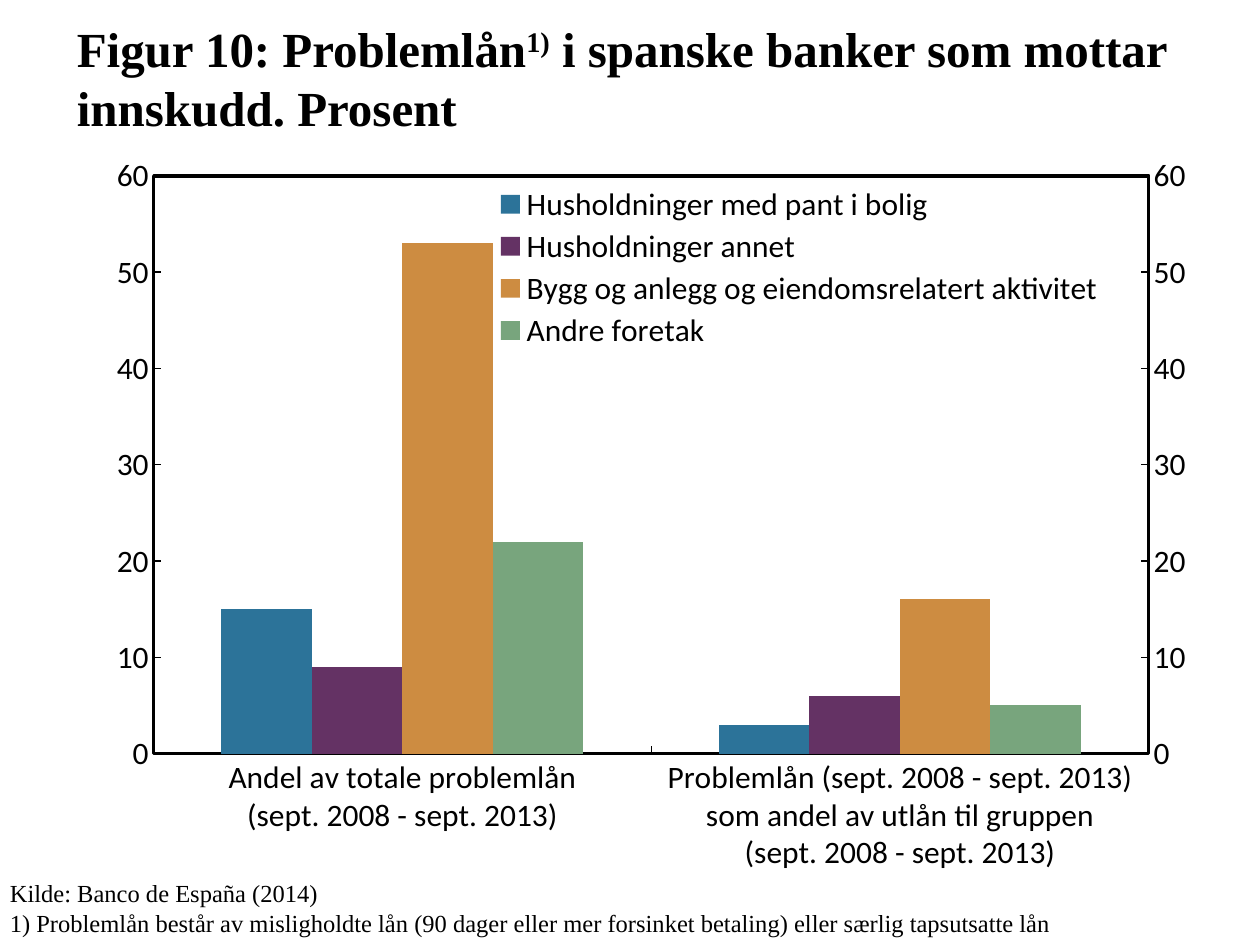
from copy import deepcopy
from lxml.etree import SubElement
from pptx import Presentation
from pptx.chart.data import CategoryChartData
from pptx.dml.color import RGBColor
from pptx.enum.chart import XL_CHART_TYPE, XL_LEGEND_POSITION, XL_MARKER_STYLE, XL_TICK_MARK
from pptx.enum.text import MSO_ANCHOR, PP_ALIGN
from pptx.oxml import parse_xml
from pptx.oxml.ns import nsdecls, qn
from pptx.util import Inches, Pt

TITLE = [("Figur 10: Problemlån", 0), ("1)", 30000),
         (" i spanske banker som mottar innskudd. Prosent", 0)]
NOTES = ["Kilde: Banco de España (2014)",
         "1) Problemlån består av misligholdte lån (90 dager eller mer forsinket betaling) "
         "eller særlig tapsutsatte lån"]
CATEGORIES = ["Andel av totale problemlån\n(sept. 2008 - sept. 2013)",
              "Problemlån (sept. 2008 - sept. 2013)\nsom andel av utlån til gruppen\n"
              "(sept. 2008 - sept. 2013)"]
BARS = [("Husholdninger med pant i bolig", (15, 3), "2C7399"),
        ("Husholdninger annet", (9, 6), "643264"),
        ("Bygg og anlegg og eiendomsrelatert aktivitet", (53, 16), "CD8C41"),
        ("Andre foretak", (22, 5), "78A57D")]
RIGHT_SERIES = ("Series 5", (2, 2))
PLOT_BOX = (0.063, 0.043, 0.905, 0.802)
LEGEND_BOX = (0.37, 0.05, 0.56, 0.24)
BLACK = "000000"


def color(value):
    return RGBColor.from_string(value)


def set_font(font, size, name="Times New Roman", bold=False):
    font.size, font.name, font.bold = Pt(size), name, bold
    font.color.rgb = color(BLACK)


def add_text(paragraph, text, baseline=0, **font):
    run = paragraph.add_run()
    run.text = text
    set_font(run.font, **font)
    if baseline:
        run.font._element.set("baseline", str(baseline))


def place(shape, left, top, width, height):
    shape.left, shape.top = Inches(left), Inches(top)
    shape.width, shape.height = Inches(width), Inches(height)


def remove_children(element, tag):
    for child in element.findall(qn(tag)):
        element.remove(child)


def layout_xml(box, inner=False):
    target = '<c:layoutTarget val="inner"/>' if inner else ""
    modes = '<c:xMode val="edge"/><c:yMode val="edge"/>'
    sizes = "".join(f'<c:{key} val="{value}"/>' for key, value in zip("xywh", box))
    return parse_xml(f'<c:layout {nsdecls("c")}><c:manualLayout>{target}{modes}{sizes}'
                     '</c:manualLayout></c:layout>')


def set_value(element, tag, value):
    element.find(qn(tag)).set("val", value)


def style_axis(axis):
    axis.major_tick_mark, axis.minor_tick_mark = XL_TICK_MARK.INSIDE, XL_TICK_MARK.NONE
    axis.has_major_gridlines = False
    axis.format.line.color.rgb = color(BLACK)
    axis.format.line.width = Pt(0.75)


def add_right_axis(chart):
    plot_area = chart._chartSpace.chart.plotArea
    bar_chart = plot_area.find(qn("c:barChart"))
    line_chart = parse_xml(f'<c:lineChart {nsdecls("c")}><c:grouping val="standard"/>'
                           '<c:varyColors val="0"/></c:lineChart>')
    bar_chart.addnext(line_chart)
    series = bar_chart.findall(qn("c:ser"))[-1]
    remove_children(series, "c:invertIfNegative")
    line_chart.append(series)
    SubElement(line_chart, qn("c:marker")).set("val", "1")
    for identifier in ("50010", "50020"):
        SubElement(line_chart, qn("c:axId")).set("val", identifier)

    category = deepcopy(plot_area.find(qn("c:catAx")))
    value = deepcopy(plot_area.find(qn("c:valAx")))
    for axis, identifier, crossing in ((category, "50010", "50020"), (value, "50020", "50010")):
        set_value(axis, "c:axId", identifier)
        set_value(axis, "c:crossAx", crossing)
    set_value(value, "c:axPos", "r")
    set_value(value, "c:crosses", "max")
    set_value(category, "c:delete", "1")
    plot_area.find(qn("c:valAx")).addnext(value)
    value.addnext(category)

    line = chart.plots[1].series[0]
    line.format.line.fill.background()
    line.marker.style = XL_MARKER_STYLE.NONE
    line.smooth = False


def add_legend(chart):
    chart.has_legend = True
    legend = chart.legend
    legend.position = XL_LEGEND_POSITION.RIGHT
    legend.include_in_layout = True
    set_font(legend.font, 18, "Calibri")
    element = legend._element
    remove_children(element, "c:layout")
    entry = parse_xml(f'<c:legendEntry {nsdecls("c")}><c:idx val="{len(BARS)}"/>'
                      '<c:delete val="1"/></c:legendEntry>')
    element.find(qn("c:legendPos")).addnext(entry)
    entry.addnext(layout_xml(LEGEND_BOX))


def frame_plot(chart):
    plot_area = chart._chartSpace.chart.plotArea
    remove_children(plot_area, "c:layout")
    plot_area.insert(0, layout_xml(PLOT_BOX, inner=True))
    plot_area.append(parse_xml(
        f'<c:spPr {nsdecls("c", "a")}><a:noFill/><a:ln w="{int(Pt(2))}"><a:solidFill>'
        f'<a:srgbClr val="{BLACK}"/></a:solidFill></a:ln></c:spPr>'))


def add_loan_chart(slide):
    data = CategoryChartData(number_format="0")
    data.categories = CATEGORIES
    for name, values, *_ in BARS + [RIGHT_SERIES]:
        data.add_series(name, values)
    chart = slide.shapes.add_chart(XL_CHART_TYPE.COLUMN_CLUSTERED, Inches(0.67), Inches(1.15),
                                   Inches(8.74), Inches(5.77), data).chart
    chart.has_title = False
    set_font(chart.font, 18, "Calibri")
    plot = chart.plots[0]
    plot.gap_width, plot.overlap, plot.vary_by_categories = 150, 0, False
    for series, (_, _, fill) in zip(plot.series, BARS):
        series.format.fill.solid()
        series.format.fill.fore_color.rgb = color(fill)
    style_axis(chart.category_axis)
    style_axis(chart.value_axis)
    axis = chart.value_axis
    axis.minimum_scale, axis.maximum_scale, axis.major_unit = 0, 60, 10
    add_right_axis(chart)
    add_legend(chart)
    frame_plot(chart)


def main():
    presentation = Presentation()
    presentation.slide_width, presentation.slide_height = Inches(10), Inches(7.5)
    slide = presentation.slides.add_slide(presentation.slide_layouts[5])

    title = slide.shapes.title
    place(title, 0.51, -0.01, 9, 1.25)
    title.text_frame.vertical_anchor = MSO_ANCHOR.MIDDLE
    heading = title.text_frame.paragraphs[0]
    heading.alignment = PP_ALIGN.LEFT
    for text, baseline in TITLE:
        add_text(heading, text, baseline, size=28, bold=True)

    add_loan_chart(slide)

    notes = slide.shapes.add_textbox(Inches(-0.02), Inches(6.92), Inches(8.64), Inches(0.57))
    notes.text_frame.word_wrap = True
    paragraph = notes.text_frame.paragraphs[0]
    for index, text in enumerate(NOTES):
        if index:
            paragraph.add_line_break()
        add_text(paragraph, text, size=14)

    presentation.save("out.pptx")


if __name__ == "__main__":
    main()
